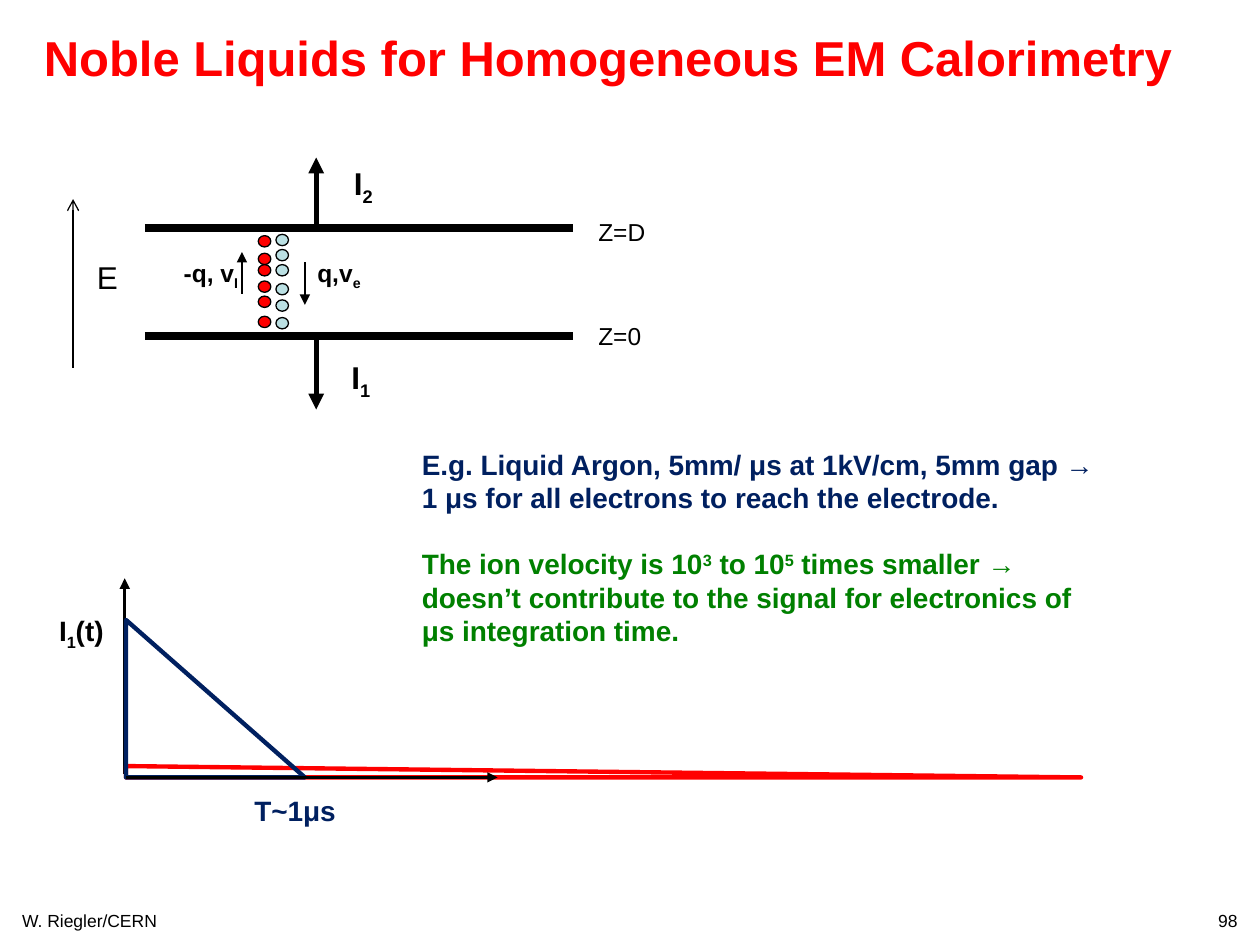
from dataclasses import dataclass
from typing import NamedTuple

from lxml import etree
from pptx import Presentation
from pptx.dml.color import RGBColor
from pptx.enum.shapes import MSO_CONNECTOR, MSO_SHAPE
from pptx.enum.text import MSO_AUTO_SIZE, PP_ALIGN
from pptx.oxml.ns import qn
from pptx.util import Inches, Pt

STRAIGHT = MSO_CONNECTOR.STRAIGHT
OVAL, TRIANGLE = MSO_SHAPE.OVAL, MSO_SHAPE.ISOSCELES_TRIANGLE
LEFT, CENTER, RIGHT = PP_ALIGN.LEFT, PP_ALIGN.CENTER, PP_ALIGN.RIGHT
NO_AUTOFIT = MSO_AUTO_SIZE.NONE


@dataclass(frozen=True)
class Theme:
    font: str = "Arial"
    black: str = "000000"
    red: str = "FF0000"
    navy: str = "002060"
    green: str = "008000"
    pale_blue: str = "BBE0E3"
    title: int = 28
    symbol: int = 18
    body: int = 16
    label: int = 14
    footer: int = 10


THEME = Theme()
SUBSCRIPT, SUPERSCRIPT = -25, 30


class Piece(NamedTuple):
    text: str
    baseline: int = 0


class Box(NamedTuple):
    left: float
    top: float
    width: float
    height: float


class Label(NamedTuple):
    box: Box
    pieces: list[Piece]
    size: int
    color: str = THEME.black
    bold: bool = True
    align: PP_ALIGN = LEFT


class Line(NamedTuple):
    start: tuple[float, float]
    end: tuple[float, float]
    width: float
    arrow: str = ""


class Charges(NamedTuple):
    left: float
    color: str
    tops: list[float]


class Pulse(NamedTuple):
    box: Box
    color: str


def write_paragraph(paragraph, pieces: list[Piece], *, size: int, color: str,
                    bold: bool = True, align: PP_ALIGN = LEFT) -> None:
    paragraph.alignment = align
    for piece in pieces:
        run = paragraph.add_run()
        run.text = piece.text
        run.font.name = THEME.font
        run.font.size = Pt(size)
        run.font.bold = bold
        run.font.color.rgb = RGBColor.from_string(color)
        if piece.baseline:
            run.font._element.set("baseline", str(piece.baseline * 1000))


def add_text_frame(slide, box: Box, *, wrap: bool = False):
    frame = slide.shapes.add_textbox(*map(Inches, box)).text_frame
    frame.word_wrap = wrap
    frame.auto_size = NO_AUTOFIT
    return frame


def draw_label(slide, label: Label) -> None:
    frame = add_text_frame(slide, label.box)
    write_paragraph(frame.paragraphs[0], label.pieces, size=label.size,
                    color=label.color, bold=label.bold, align=label.align)


def draw_line(slide, line: Line) -> None:
    connector = slide.shapes.add_connector(
        STRAIGHT, *map(Inches, (*line.start, *line.end)))
    connector.line.color.rgb = RGBColor.from_string(THEME.black)
    connector.line.width = Pt(line.width)
    if line.arrow:
        etree.SubElement(connector.line._get_or_add_ln(), qn("a:tailEnd"), type=line.arrow)
    etree.SubElement(connector._element.spPr, qn("a:effectLst"))


def draw_charges(slide, charges: Charges) -> None:
    for top in charges.tops:
        box = Box(charges.left, top, 0.1, 0.09)
        circle = slide.shapes.add_shape(OVAL, *map(Inches, box))
        circle.shadow.inherit = False
        circle.fill.solid()
        circle.fill.fore_color.rgb = RGBColor.from_string(charges.color)
        circle.line.color.rgb = RGBColor.from_string(THEME.black)
        circle.line.width = Pt(0.75)


def draw_pulse(slide, pulse: Pulse) -> None:
    """Outline a current that starts at its peak and falls linearly to zero."""
    triangle = slide.shapes.add_shape(TRIANGLE, *map(Inches, pulse.box))
    triangle.adjustments[0] = 0
    triangle.shadow.inherit = False
    triangle.fill.background()
    triangle.line.color.rgb = RGBColor.from_string(pulse.color)
    triangle.line.width = Pt(2.5)
    etree.SubElement(triangle.line._get_or_add_ln(), qn("a:round"))


def draw_explanation(slide) -> None:
    frame = add_text_frame(slide, Box(3.25, 3.5, 5.67, 1.72), wrap=True)
    frame.margin_right = Inches(0.15)
    write_paragraph(frame.paragraphs[0], [
        Piece("E.g. Liquid Argon, 5mm/ μs at 1kV/cm, 5mm gap → "
              "1 μs for all electrons to reach the electrode."),
    ], size=THEME.body, color=THEME.navy)
    ions = frame.add_paragraph()
    ions.space_before = Pt(18.4)
    write_paragraph(ions, [
        Piece("The ion velocity is 10"), Piece("3", SUPERSCRIPT),
        Piece(" to 10"), Piece("5", SUPERSCRIPT),
        Piece(" times smaller → doesn’t contribute to the signal "
              "for electronics of μs integration time."),
    ], size=THEME.body, color=THEME.green)


LABELS = [
    Label(Box(0, 7.17, 1.42, 0.34), [Piece("W. Riegler/CERN")],
          THEME.footer, bold=False, align=CENTER),
    Label(Box(9.5, 7.17, 0.42, 0.27), [Piece("98")],
          THEME.footer, bold=False, align=RIGHT),
    Label(Box(0.25, 0.17, 9.26, 0.57),
          [Piece("Noble Liquids for Homogeneous EM Calorimetry")],
          THEME.title, THEME.red),
    Label(Box(2.69, 2.79, 0.42, 0.4), [Piece("I"), Piece("1", SUBSCRIPT)], THEME.symbol),
    Label(Box(2.71, 1.25, 0.42, 0.4), [Piece("I"), Piece("2", SUBSCRIPT)], THEME.symbol),
    Label(Box(2.42, 2, 0.56, 0.34), [Piece("q,v"), Piece("e", SUBSCRIPT)], THEME.label),
    Label(Box(1.36, 2, 0.64, 0.34), [Piece("-q, v"), Piece("I", SUBSCRIPT)], THEME.label),
    Label(Box(4.65, 1.67, 0.67, 0.33), [Piece("Z=D")], THEME.label, bold=False),
    Label(Box(4.65, 2.5, 0.63, 0.33), [Piece("Z=0")], THEME.label, bold=False),
    Label(Box(0.67, 2, 0.43, 0.4), [Piece("E")], THEME.symbol, bold=False),
    Label(Box(0.37, 4.82, 0.72, 0.53),
          [Piece("I"), Piece("1", SUBSCRIPT), Piece("(t)")], THEME.body),
    Label(Box(1.92, 6.25, 0.86, 0.37), [Piece("T~1μs")], THEME.body, THEME.navy),
]
DETECTOR_LINES = [
    Line((1.15, 1.81), (4.55, 1.81), 4.5),
    Line((1.15, 2.67), (4.55, 2.67), 4.5),
    Line((2.51, 1.83), (2.51, 1.25), 3, "triangle"),
    Line((2.51, 2.67), (2.51, 3.25), 3, "triangle"),
    Line((2.42, 2.08), (2.42, 2.42), 0.75, "triangle"),
    Line((1.92, 2.33), (1.92, 2), 0.75, "triangle"),
    Line((0.58, 2.92), (0.58, 1.58), 0.75, "arrow"),
]
CHARGE_COLUMNS = [
    Charges(2.05, THEME.red, [1.87, 2.01, 2.1, 2.23, 2.35, 2.51]),
    Charges(2.19, THEME.pale_blue, [1.86, 1.98, 2.1, 2.25, 2.38, 2.52]),
]
TIME_AXIS = Line((1, 6.17), (3.95, 6.17), 1.75, "triangle")
CURRENT_AXIS = Line((0.99, 6.14), (0.99, 4.59), 2, "triangle")
PULSES = [
    Pulse(Box(1, 6.08, 7.58, 0.09), THEME.red),
    Pulse(Box(1, 4.92, 1.42, 1.25), THEME.navy),
]


def main() -> None:
    presentation = Presentation()
    presentation.slide_width, presentation.slide_height = Inches(10), Inches(7.5)
    slide = presentation.slides.add_slide(presentation.slide_layouts[6])
    for line in [*DETECTOR_LINES, CURRENT_AXIS]:
        draw_line(slide, line)
    for charges in CHARGE_COLUMNS:
        draw_charges(slide, charges)
    for label in LABELS:
        draw_label(slide, label)
    for pulse in PULSES:
        draw_pulse(slide, pulse)
    draw_line(slide, TIME_AXIS)
    draw_explanation(slide)
    presentation.save("out.pptx")


if __name__ == "__main__":
    main()
